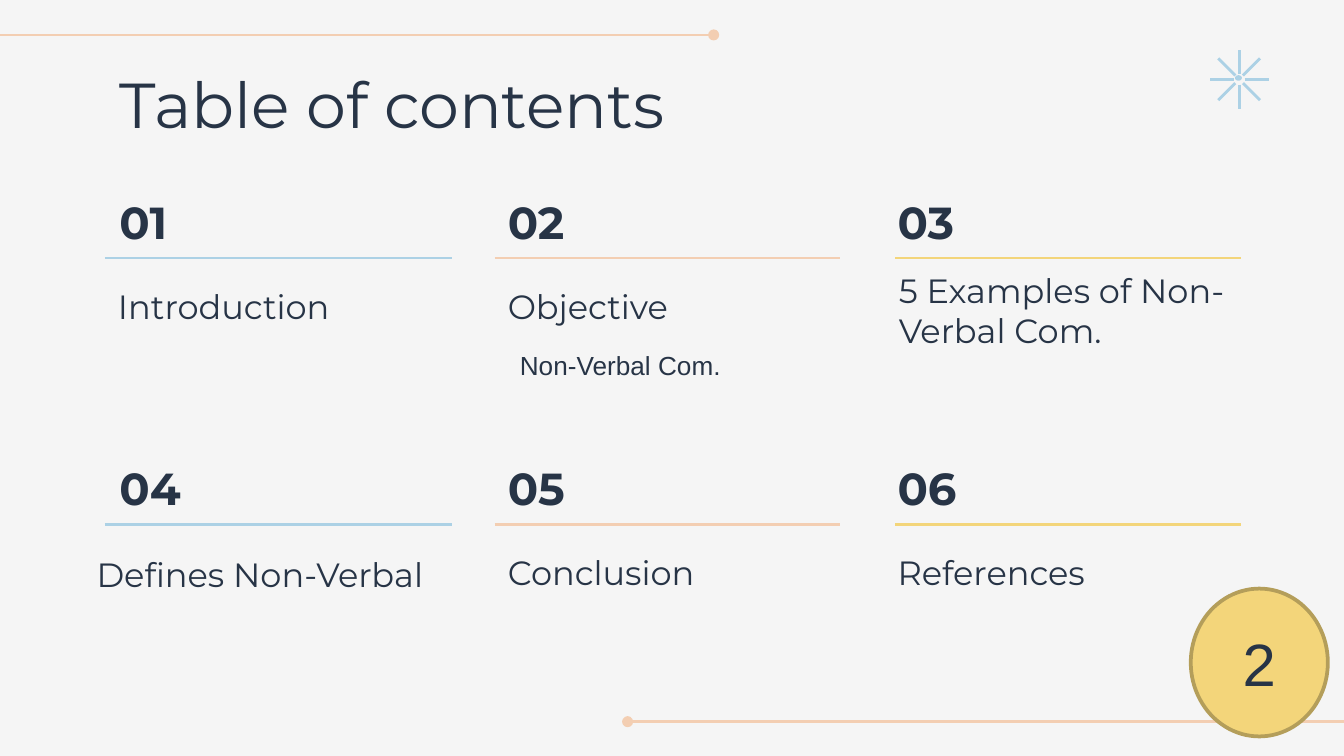
from dataclasses import dataclass
from math import cos, pi, sin

from lxml.etree import SubElement
from pptx import Presentation
from pptx.dml.color import RGBColor
from pptx.enum.shapes import MSO_CONNECTOR as Connector, MSO_SHAPE as Preset
from pptx.enum.text import MSO_ANCHOR as Anchor, MSO_AUTO_SIZE as AutoSize, PP_ALIGN as Align
from pptx.oxml.ns import qn
from pptx.util import Inches, Pt

NAVY, BLUE, PEACH, YELLOW = "273446", "ACD1E5", "F3CEB2", "F3D57A"
OLIVE, PALE, CORAL = "B49E5A", "F5F5F5", "FCA8A2"
HEADING_FONT, PLAIN_FONT = "Montserrat", "Arial"


@dataclass
class Box:
    left: float
    top: float
    width: float
    height: float

    def lengths(self) -> tuple:
        return tuple(Inches(n) for n in (self.left, self.top, self.width, self.height))


@dataclass
class Style:
    size: float
    font: str = HEADING_FONT
    bold: bool = False
    anchor: Anchor = Anchor.MIDDLE
    spacing: float = 1.0
    align: Align = Align.LEFT


@dataclass
class Column:
    left: float
    rule_start: float
    rule_end: float
    color: str


@dataclass
class Topic:
    title: str
    dx: float = 0
    dy: float = 0
    width: float = 2.64


NUMBER = Style(24, bold=True, spacing=0.9)
TOPIC = Style(18, anchor=Anchor.BOTTOM)
COLUMNS = [
    Column(0.79, 0.78, 3.36, BLUE),
    Column(3.68, 3.68, 6.25, PEACH),
    Column(6.58, 6.66, 9.23, YELLOW),
]
ROW_TOPS = [1.35, 3.33]
TOPICS = [
    Topic("Introduction", -0.01),
    Topic("Objective"),
    Topic("5 Examples of Non-Verbal Com.", 0.01, 0.18),
    Topic("Defines Non-Verbal", -0.17, 0.01, 2.9),
    Topic("Conclusion"),
    Topic("References"),
]


def rgb(color: str) -> RGBColor:
    return RGBColor.from_string(color)


def write(frame, text: str, style: Style, inset: float = 0.1) -> None:
    frame.text = text
    frame.word_wrap = True
    frame.auto_size = AutoSize.NONE
    frame.vertical_anchor = style.anchor
    frame.margin_left = frame.margin_right = Inches(inset)
    frame.margin_top = frame.margin_bottom = Inches(inset)
    paragraph = frame.paragraphs[0]
    paragraph.alignment = style.align
    paragraph.line_spacing = style.spacing
    font = paragraph.runs[0].font
    font.name, font.size, font.bold = style.font, Pt(style.size), style.bold
    font.color.rgb = rgb(NAVY)


def add_text(slide, box: Box, text: str, style: Style):
    frame = slide.shapes.add_textbox(*box.lengths()).text_frame
    write(frame, text, style)
    return frame


def add_line(slide, start: tuple, end: tuple, color: str, dot: str = "") -> None:
    points = (Inches(n) for n in (*start, *end))
    line = slide.shapes.add_connector(Connector.STRAIGHT, *points)
    line.line.color.rgb = rgb(color)
    line.line.width = Pt(1.5)
    properties = line._element.spPr
    if dot:
        SubElement(properties.find(qn("a:ln")), qn(f"a:{dot}"), type="oval")
    SubElement(properties, qn("a:effectLst"))


def add_ellipse(slide, box: Box, fill: str, outline: str, width: float):
    ellipse = slide.shapes.add_shape(Preset.OVAL, *box.lengths())
    ellipse.shadow.inherit = False
    ellipse.fill.solid()
    ellipse.fill.fore_color.rgb = rgb(fill)
    ellipse.line.color.rgb = rgb(outline)
    ellipse.line.width = Pt(width)
    return ellipse


def add_star(slide, x: float, y: float, inner: float, outer: float) -> None:
    for step in range(8):
        dx, dy = cos(step * pi / 4), sin(step * pi / 4)
        start = (x + inner * dx, y + inner * dy)
        end = (x + outer * dx, y + outer * dy)
        add_line(slide, start, end, BLUE)
    add_ellipse(slide, Box(x - 0.02, y - 0.02, 0.03, 0.02), CORAL, BLUE, 1.5)


def add_entry(slide, index: int, topic: Topic) -> None:
    row, position = divmod(index, len(COLUMNS))
    column, top = COLUMNS[position], ROW_TOPS[row]
    add_text(slide, Box(column.left, top, 2.64, 0.65), f"{index + 1:02}", NUMBER)
    topic_box = Box(column.left + topic.dx, top + 0.65 + topic.dy, topic.width, 0.53)
    add_text(slide, topic_box, topic.title, TOPIC)
    rule_y = top + 0.57
    add_line(slide, (column.rule_start, rule_y), (column.rule_end, rule_y), column.color)


def main() -> None:
    deck = Presentation()
    deck.slide_width = Inches(10)
    deck.slide_height = deck.slide_width * 9 // 16
    slide = deck.slides.add_slide(deck.slide_layouts[5])
    slide.background.fill.solid()
    slide.background.fill.fore_color.rgb = rgb(PALE)

    add_line(slide, (-0.01, 0.26), (5.31, 0.26), PEACH, "tailEnd")
    add_line(slide, (4.67, 5.37), (10, 5.37), PEACH, "headEnd")
    add_star(slide, 9.22, 0.59, 0.04, 0.22)

    title = slide.shapes.title
    title.left, title.top, title.width, title.height = Box(0.79, 0.49, 8.43, 0.63).lengths()
    write(title.text_frame, "Table of contents", Style(34, spacing=0.9))

    for index, topic in enumerate(TOPICS):
        add_entry(slide, index, topic)

    subtopic_style = Style(14, PLAIN_FONT, anchor=Anchor.TOP)
    subtopic = add_text(slide, Box(3.62, 2.5, 2.64, 0.53), "Non-Verbal Com.", subtopic_style)
    indents = subtopic.paragraphs[0]._p.get_or_add_pPr()
    indents.set("marL", str(Inches(0.5)))
    indents.set("indent", str(Inches(-0.35)))

    page_badge = add_ellipse(slide, Box(8.86, 4.38, 1.02, 1.1), YELLOW, OLIVE, 2)
    write(page_badge.text_frame, "2", Style(32, PLAIN_FONT, align=Align.CENTER), 0.05)

    deck.save("out.pptx")


if __name__ == "__main__":
    main()
